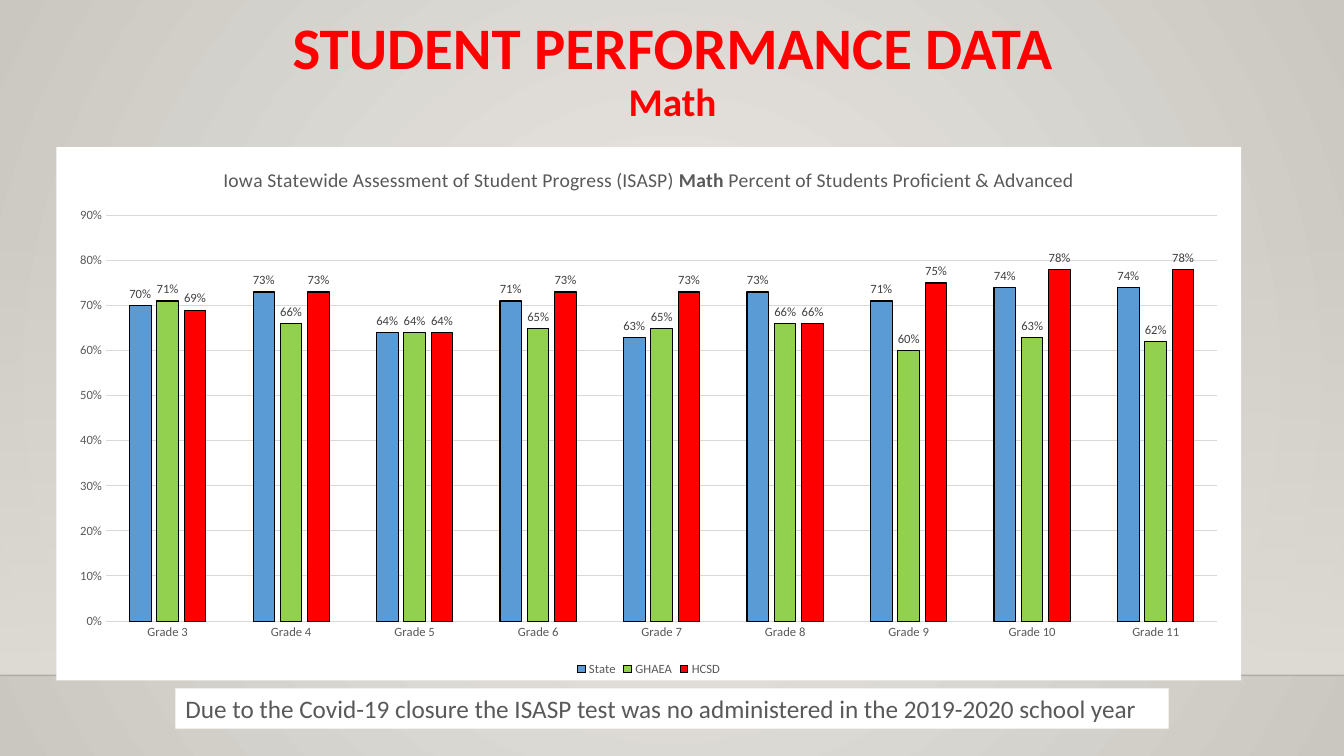
import lxml.etree
import pptx
import pptx.chart.data
import pptx.dml.color
import pptx.enum.chart
import pptx.enum.dml
import pptx.enum.shapes
import pptx.enum.text
import pptx.oxml
import pptx.oxml.ns
import pptx.util
from pptx.util import Inches

FONT = "Calibri"
GRAY = "595959"
GRID = "D9D9D9"
GRADES = [f"Grade {number}" for number in range(3, 12)]
RESULTS = [
    ("State", "5B9BD5", [0.70, 0.73, 0.64, 0.71, 0.63, 0.73, 0.71, 0.74, 0.74]),
    ("GHAEA", "92D050", [0.71, 0.66, 0.64, 0.65, 0.65, 0.66, 0.60, 0.63, 0.62]),
    ("HCSD", "FF0000", [0.69, 0.73, 0.64, 0.73, 0.73, 0.66, 0.75, 0.78, 0.78]),
]


def rgb(color):
    """Turn a hex string into a colour."""
    return pptx.dml.color.RGBColor.from_string(color)


def set_font(font, size, color, bold=False):
    """Set the face, size, colour and weight of a font."""
    font.name = FONT
    font.size = pptx.util.Pt(size)
    font.bold = bold
    font.color.rgb = rgb(color)


def set_line(line, color, width=0.75):
    """Give a line a solid colour and a width in points."""
    line.color.rgb = rgb(color)
    line.width = pptx.util.Pt(width)


def set_alpha(element, percent):
    """Set the opacity of the first colour inside an element."""
    color = next(element.iter(pptx.oxml.ns.qn("a:srgbClr")))
    alpha = lxml.etree.SubElement(color, pptx.oxml.ns.qn("a:alpha"))
    alpha.set("val", str(percent * 1000))


def set_gradient(fill, start, end):
    """Fill with a two-colour gradient running downwards."""
    fill.gradient()
    fill.gradient_angle = 270
    for stop, color, position in zip(fill.gradient_stops, (start, end), (0, 1)):
        stop.color.rgb = rgb(color)
        stop.position = position


def add_backdrop(slide):
    """Paint the radial wall, the fading floor and the horizon line."""
    set_gradient(slide.background.fill, "ECEAE7", "CAC7C1")
    direction = next(slide._element.iter(pptx.oxml.ns.qn("a:lin")))
    radial = pptx.oxml.parse_xml(
        f'<a:path {pptx.oxml.ns.nsdecls("a")} path="circle">'
        '<a:fillToRect l="50000" t="50000" r="50000" b="50000"/></a:path>')
    direction.getparent().replace(direction, radial)

    floor = slide.shapes.add_shape(
        pptx.enum.shapes.MSO_SHAPE.RECTANGLE,
        Inches(0), Inches(2.21), Inches(13.33), Inches(4.49))
    floor.shadow.inherit = False
    floor.line.fill.background()
    set_gradient(floor.fill, "DFDBD5", "DFDBD5")
    set_alpha(floor._element.spPr, 0)

    horizon = slide.shapes.add_connector(
        pptx.enum.shapes.MSO_CONNECTOR.STRAIGHT,
        Inches(0), Inches(6.7), Inches(13.33), Inches(6.7))
    set_line(horizon.line, "000001", 1)
    set_alpha(horizon._element.spPr, 20)
    lxml.etree.SubElement(horizon._element.spPr, pptx.oxml.ns.qn("a:effectLst"))


def add_title(slide):
    """Place the two-line heading."""
    title = slide.shapes.title
    title.left, title.top = Inches(0.92), Inches(0.09)
    title.width, title.height = Inches(11.5), Inches(1.25)
    frame = title.text_frame
    frame.text = "STUDENT PERFORMANCE DATA\nMath"
    frame.vertical_anchor = pptx.enum.text.MSO_ANCHOR.MIDDLE
    for paragraph, size in zip(frame.paragraphs, (42, 28)):
        paragraph.alignment = pptx.enum.text.PP_ALIGN.CENTER
        paragraph.line_spacing = 0.9
        paragraph.space_before = pptx.util.Pt(0)
        set_font(paragraph.font, size, "FF0000", True)


def add_note(slide, text):
    """Add the white note under the chart."""
    note = slide.shapes.add_textbox(
        Inches(1.74), Inches(6.83), Inches(9.85), Inches(0.4))
    note.fill.solid()
    note.fill.fore_color.rgb = rgb("FFFFFF")
    frame = note.text_frame
    frame.word_wrap = True
    frame.auto_size = pptx.enum.text.MSO_AUTO_SIZE.SHAPE_TO_FIT_TEXT
    frame.text = text
    set_font(frame.paragraphs[0].font, 18, GRAY)


def format_axes(chart):
    """Style the grade axis and the percent axis."""
    grades, percents = chart.category_axis, chart.value_axis
    for axis in (grades, percents):
        axis.major_tick_mark = pptx.enum.chart.XL_TICK_MARK.NONE
        axis.minor_tick_mark = pptx.enum.chart.XL_TICK_MARK.NONE
        set_font(axis.tick_labels.font, 9, GRAY)
    set_line(grades.format.line, GRID)
    percents.format.line.fill.background()
    percents.minimum_scale, percents.maximum_scale = 0, 0.9
    percents.major_unit = 0.1
    percents.tick_labels.number_format = "0%"
    percents.tick_labels.number_format_is_linked = False
    set_line(percents.major_gridlines.format.line, GRID)


def format_series(series, color):
    """Colour the bars of one series and label them."""
    series.format.fill.solid()
    series.format.fill.fore_color.rgb = rgb(color)
    set_line(series.format.line, "000000")
    labels = series.data_labels
    labels.show_value = True
    labels.position = pptx.enum.chart.XL_LABEL_POSITION.OUTSIDE_END
    labels.number_format = "0%"
    labels.number_format_is_linked = False
    set_font(labels.font, 9, "404040")


def add_results_chart(slide):
    """Add the clustered columns of proficiency by grade."""
    data = pptx.chart.data.CategoryChartData(number_format="0%")
    data.categories = GRADES
    for name, _, shares in RESULTS:
        data.add_series(name, shares)
    chart = slide.shapes.add_chart(
        pptx.enum.chart.XL_CHART_TYPE.COLUMN_CLUSTERED,
        Inches(0.56), Inches(1.46), Inches(11.75), Inches(5.29), data).chart
    set_font(chart.font, 10, "000000")

    heading = chart.chart_title.text_frame.paragraphs[0]
    set_font(heading.font, 14, GRAY)
    for text, bold in (
            ("Iowa Statewide Assessment of Student Progress (ISASP) ", False),
            ("Math", True),
            (" Percent of Students Proficient & Advanced", False)):
        run = heading.add_run()
        run.text = text
        set_font(run.font, 14, GRAY, bold)
    chart.chart_title.include_in_layout = False

    chart.has_legend = True
    chart.legend.position = pptx.enum.chart.XL_LEGEND_POSITION.BOTTOM
    chart.legend.include_in_layout = False
    set_font(chart.legend.font, 9, GRAY)

    format_axes(chart)
    plot = chart.plots[0]
    plot.gap_width, plot.overlap = 219, -27
    plot.vary_by_categories = False
    for series, (_, color, _) in zip(plot.series, RESULTS):
        format_series(series, color)

    panel = pptx.oxml.parse_xml(
        f'<c:spPr {pptx.oxml.ns.nsdecls("c", "a")}><a:solidFill>'
        '<a:srgbClr val="FFFFFF"/></a:solidFill><a:ln><a:noFill/></a:ln></c:spPr>')
    chart._chartSpace.find(pptx.oxml.ns.qn("c:txPr")).addprevious(panel)


def main():
    """Build the slide and save it."""
    deck = pptx.Presentation()
    deck.slide_width, deck.slide_height = Inches(13.33), Inches(7.5)
    slide = deck.slides.add_slide(deck.slide_layouts[5])
    add_backdrop(slide)
    add_title(slide)
    add_note(slide, "Due to the Covid-19 closure the ISASP test was no "
                    "administered in the 2019-2020 school year")
    add_results_chart(slide)
    deck.save("out.pptx")


if __name__ == "__main__":
    main()
